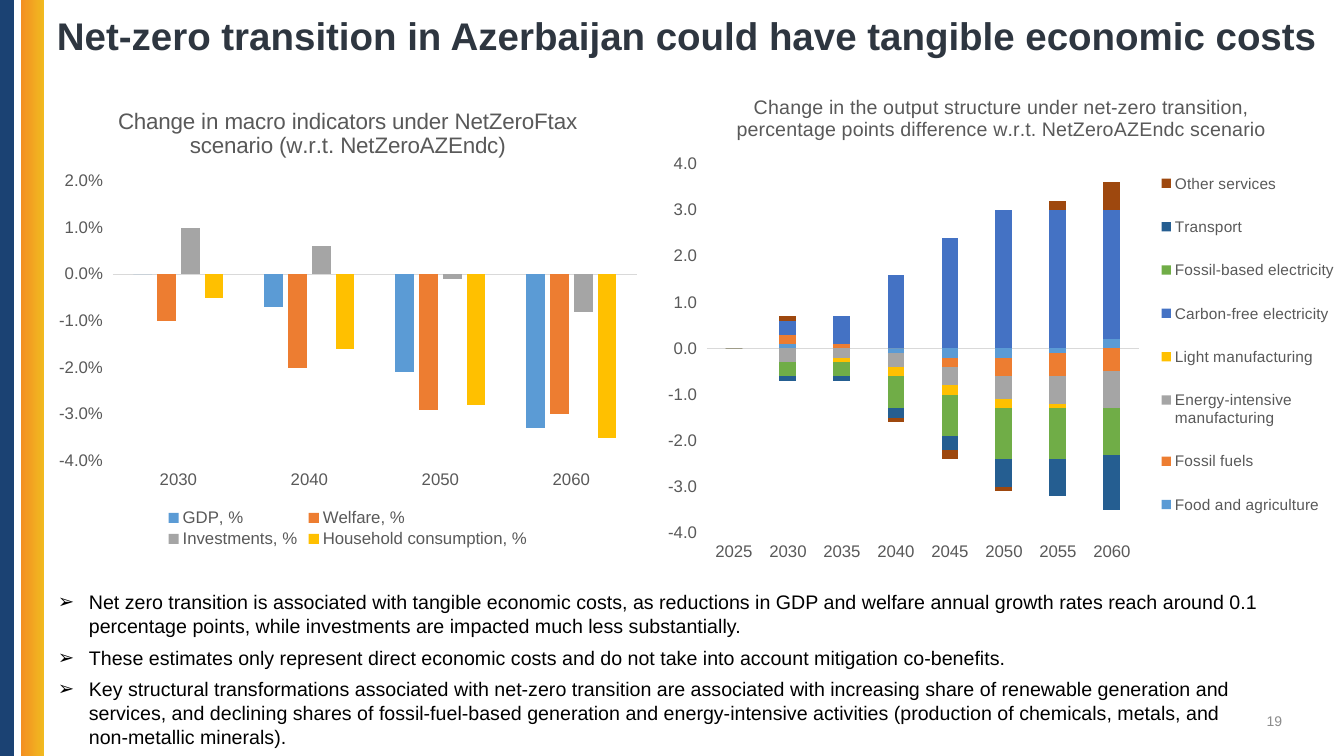
from lxml import etree
from pptx import Presentation
from pptx import util as u
from pptx.chart.data import CategoryChartData
from pptx.dml.color import RGBColor
from pptx.enum import chart as ch
from pptx.enum import shapes, text
from pptx.oxml.ns import qn

PX = 914400 / 100.8
FONT = "Arial"
NAVY = RGBColor(0x1B, 0x42, 0x73)
ORANGE = RGBColor(0xF3, 0x8F, 0x22)
AMBER = RGBColor(0xF1, 0xBA, 0x20)
HEADING = RGBColor(0x2E, 0x36, 0x40)
BLACK = RGBColor(0, 0, 0)
PAGE_GREY = RGBColor(0x8C, 0x8C, 0x8C)
CHART_GREY = RGBColor(0x59, 0x59, 0x59)
AXIS_GREY = RGBColor(0xD9, 0xD9, 0xD9)
SKY = RGBColor(0x5B, 0x9B, 0xD5)
RUST = RGBColor(0xED, 0x7D, 0x31)
SILVER = RGBColor(0xA5, 0xA5, 0xA5)
YELLOW = RGBColor(0xFF, 0xC0, 0x00)
BLUE = RGBColor(0x44, 0x72, 0xC4)
GREEN = RGBColor(0x70, 0xAD, 0x47)
DEEP_BLUE = RGBColor(0x25, 0x5E, 0x91)
BROWN = RGBColor(0x9E, 0x48, 0x0E)

HEADLINE = "Net-zero transition in Azerbaijan could have tangible economic costs"
FINDINGS = [
    "Net zero transition is associated with tangible economic costs, as reductions in GDP and "
    "welfare annual growth rates reach around 0.1 percentage points, while investments are "
    "impacted much less substantially.",
    "These estimates only represent direct economic costs and do not take into account "
    "mitigation co-benefits.",
    "Key structural transformations associated with net-zero transition are associated with "
    "increasing share of renewable generation and services, and declining shares of "
    "fossil-fuel-based generation and energy-intensive activities (production of chemicals, "
    "metals, and non-metallic minerals).",
]

MACRO = {
    "kind": ch.XL_CHART_TYPE.COLUMN_CLUSTERED,
    "box": (47, 90, 602, 463),
    "title": "Change in macro indicators under NetZeroFtax scenario (w.r.t. NetZeroAZEndc)",
    "title_size": 16, "title_at": (114, 103),
    "plot": (113, 181, 524, 280),
    "legend": (163, 506, 370, 45),
    "legend_side": ch.XL_LEGEND_POSITION.BOTTOM, "legend_size": 12,
    "scale": {"minimum_scale": -0.04, "maximum_scale": 0.02, "major_unit": 0.01},
    "number_format": "0.0%", "overlap": -27,
    "years": ["2030", "2040", "2050", "2060"],
    "series": [
        ("GDP, %", SKY, (0, -0.007, -0.021, -0.033)),
        ("Welfare, %", RUST, (-0.01, -0.02, -0.029, -0.03)),
        ("Investments, %", SILVER, (0.01, 0.006, -0.001, -0.008)),
        ("Household consumption, %", YELLOW, (-0.005, -0.016, -0.028, -0.035)),
    ],
}
OUTPUT = {
    "kind": ch.XL_CHART_TYPE.COLUMN_STACKED,
    "box": (660, 77, 684, 495),
    "title": "Change in the output structure under net-zero transition, "
             "percentage points difference w.r.t. NetZeroAZEndc scenario",
    "title_size": 14, "title_at": (733, 91),
    "plot": (707, 164, 432, 369),
    "legend": (1152, 149, 192, 390),
    "legend_side": ch.XL_LEGEND_POSITION.RIGHT, "legend_size": 11,
    "scale": {"minimum_scale": -4, "maximum_scale": 4, "major_unit": 1},
    "number_format": "0.0", "overlap": 100,
    "years": [str(year) for year in range(2025, 2061, 5)],
    "series": [
        ("Food and agriculture", SKY, (0, 0.1, 0, -0.1, -0.2, -0.2, -0.1, 0.2)),
        ("Fossil fuels", RUST, (0, 0.2, 0.1, 0, -0.2, -0.4, -0.5, -0.5)),
        ("Energy-intensive manufacturing", SILVER,
         (0, -0.3, -0.2, -0.3, -0.4, -0.5, -0.6, -0.8)),
        ("Light manufacturing", YELLOW, (0, 0, -0.1, -0.2, -0.2, -0.2, -0.1, 0)),
        ("Carbon-free electricity", BLUE, (0, 0.3, 0.6, 1.6, 2.4, 3, 3, 2.8)),
        ("Fossil-based electricity", GREEN, (0, -0.3, -0.3, -0.7, -0.9, -1.1, -1.1, -1)),
        ("Transport", DEEP_BLUE, (0, -0.1, -0.1, -0.2, -0.3, -0.6, -0.8, -1.2)),
        ("Other services", BROWN, (0, 0.1, 0, -0.1, -0.2, -0.1, 0.2, 0.6)),
    ],
}


def emu(*lengths):
    return [u.Emu(round(length * PX)) for length in lengths]


def set_all(target, values):
    for name, value in values.items():
        setattr(target, name, value)


def style_font(font, size, color, bold=False):
    set_all(font, {"name": FONT, "size": u.Pt(size), "bold": bold})
    font.color.rgb = color


def add_band(slide, box, *colors):
    """Add a vertical stripe, solid for one colour and a gradient for two."""
    band = slide.shapes.add_shape(shapes.MSO_SHAPE.RECTANGLE, *emu(*box))
    band.shadow.inherit = False
    band.line.fill.background()
    if len(colors) == 1:
        band.fill.solid()
        band.fill.fore_color.rgb = colors[0]
    else:
        band.fill.gradient()
        band.fill.gradient_angle = 0
        for stop, color in zip(band.fill.gradient_stops, colors):
            stop.color.rgb = color


def add_text(slide, box, lines, size, color, bold=False, anchor=text.MSO_ANCHOR.MIDDLE, **layout):
    frame = slide.shapes.add_textbox(*emu(*box)).text_frame
    set_all(frame, {"word_wrap": True, "vertical_anchor": anchor, "text": "\n".join(lines)})
    for paragraph in frame.paragraphs:
        set_all(paragraph, layout)
        style_font(paragraph.runs[0].font, size, color, bold)
    return frame


def add_bullets(frame, indent):
    for paragraph in frame.paragraphs:
        props = paragraph._p.get_or_add_pPr()
        props.set("marL", str(indent))
        props.set("indent", str(-indent))
        etree.SubElement(props, qn("a:buFont"), typeface=FONT)
        etree.SubElement(props, qn("a:buChar"), char="➢")


def place(part, index, area, box, inner=False):
    """Fix a chart part at a slide area, as fractions of the chart's box."""
    for old in part.findall(qn("c:layout")):
        part.remove(old)
    layout = etree.Element(qn("c:layout"))
    manual = etree.SubElement(layout, qn("c:manualLayout"))
    if inner:
        etree.SubElement(manual, qn("c:layoutTarget"), val="inner")
    for mode in ("xMode", "yMode"):
        etree.SubElement(manual, qn(f"c:{mode}"), val="edge")
    left, top, width, height = box
    origin = (left, top, 0, 0)
    for key, length, start, whole in zip("xywh", area, origin, (width, height) * 2):
        etree.SubElement(manual, qn(f"c:{key}"), val=f"{(length - start) / whole:.4f}")
    part.insert(index, layout)


def add_column_chart(slide, model):
    data = CategoryChartData(number_format=model["number_format"])
    data.categories = model["years"]
    for name, _, values in model["series"]:
        data.add_series(name, values)
    box = model["box"]
    chart = slide.shapes.add_chart(model["kind"], *emu(*box), data).chart
    style_font(chart.font, 12, CHART_GREY)

    heading = chart.chart_title.text_frame
    heading.text = model["title"]
    style_font(heading.paragraphs[0].runs[0].font, model["title_size"], CHART_GREY)
    chart.has_legend = True
    set_all(chart.legend, {"position": model["legend_side"], "include_in_layout": False})
    style_font(chart.legend.font, model["legend_size"], CHART_GREY)

    years, amounts = chart.category_axis, chart.value_axis
    for axis in (years, amounts):
        set_all(axis, {"major_tick_mark": ch.XL_TICK_MARK.NONE, "has_major_gridlines": False,
                       "tick_label_position": ch.XL_TICK_LABEL_POSITION.LOW})
        style_font(axis.tick_labels.font, 12, CHART_GREY)
    years.format.line.color.rgb = AXIS_GREY
    years.format.line.width = u.Pt(0.75)
    amounts.format.line.fill.background()
    set_all(amounts, model["scale"])
    set_all(amounts.tick_labels, {"number_format": model["number_format"],
                                  "number_format_is_linked": False})

    columns = chart.plots[0]
    set_all(columns, {"gap_width": 219, "overlap": model["overlap"], "vary_by_categories": False})
    for series, (_, color, _) in zip(columns.series, model["series"]):
        series.invert_if_negative = False
        series.format.fill.solid()
        series.format.fill.fore_color.rgb = color

    root = chart._chartSpace.chart
    place(root.plotArea, 0, model["plot"], box, inner=True)
    place(root.find(qn("c:title")), 1, model["title_at"], box)
    place(root.find(qn("c:legend")), 1, model["legend"], box)


def main():
    deck = Presentation()
    deck.slide_width, deck.slide_height = emu(1344, 756)
    slide = deck.slides.add_slide(deck.slide_layouts[6])
    add_band(slide, (-3, 0, 17, 756), NAVY)
    add_band(slide, (21, 0, 23, 756), ORANGE, AMBER)
    add_text(slide, (47, 0, 1297, 77), [HEADLINE], 27.5, HEADING, bold=True, line_spacing=0.9)
    add_text(slide, (990, 701, 302, 40), ["19"], 10, PAGE_GREY, alignment=text.PP_ALIGN.RIGHT)
    findings = add_text(slide, (48, 585, 1223, 169), FINDINGS, 14, BLACK,
                        anchor=text.MSO_ANCHOR.TOP, space_after=u.Pt(6))
    add_bullets(findings, emu(31)[0])
    add_column_chart(slide, OUTPUT)
    add_column_chart(slide, MACRO)
    deck.save("out.pptx")


if __name__ == "__main__":
    main()
